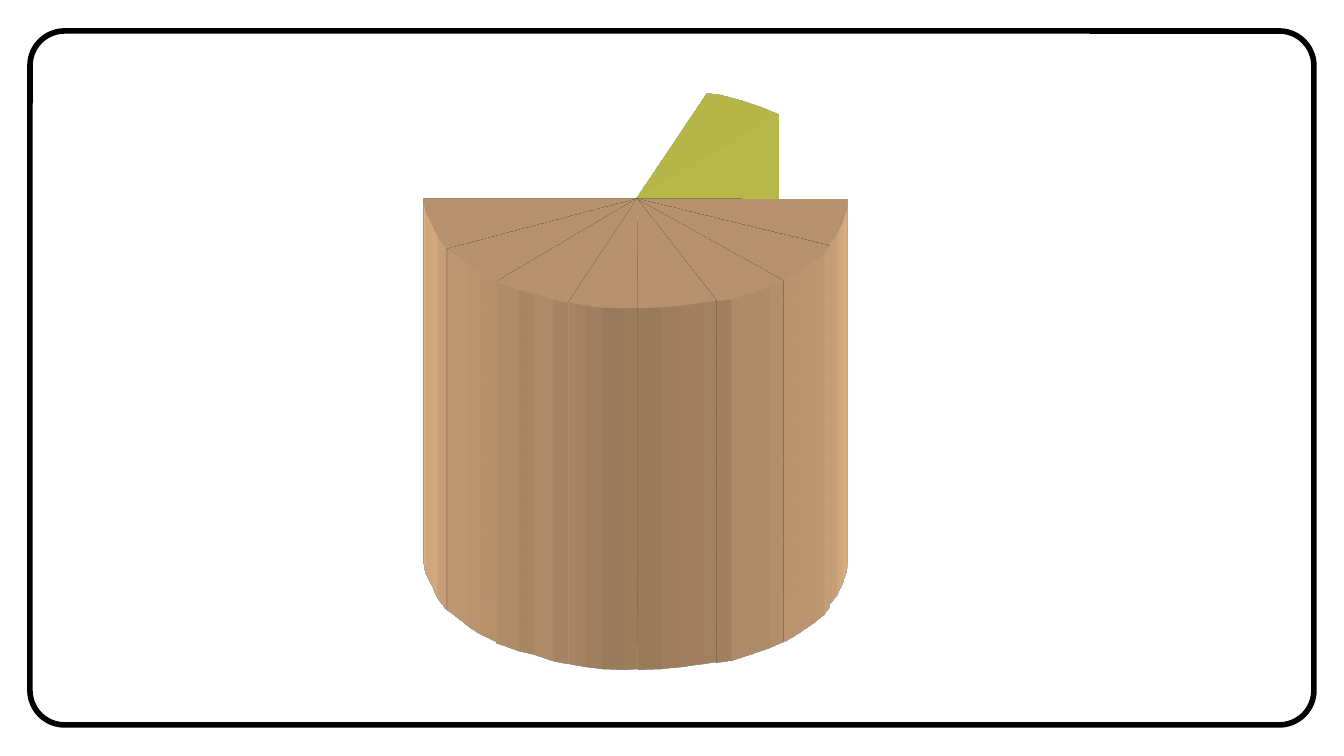
from lxml import etree
from pptx import Presentation
from pptx import util as u
from pptx.dml.color import RGBColor
from pptx.enum import shapes
from pptx.oxml.ns import qn

SCALE = 914400 / 134.4  # EMU in one px
WIDTH, HEIGHT = 1344, 756

BLACK = RGBColor(0x00, 0x00, 0x00)
WHITE = RGBColor(0xFF, 0xFF, 0xFF)
TAN = RGBColor(0xFF, 0xCC, 0x99)
YELLOW = RGBColor(0xFF, 0xFF, 0x66)

CENTRE = (637, 199)
DEPTH = 722  # an oblique view shows half of it

# Outer points of each wedge, from back to front.
LEFT_ARCS = [
    [(424, 199), (426, 212), (433, 226), (438, 237), (447, 249)],
    [(447, 249), (460, 259), (469, 266), (480, 273), (497, 281)],
    [(497, 282), (519, 290), (535, 294), (554, 300), (569, 303)],
]
YELLOW_ARC = [(707, 94), (718, 95), (742, 101), (762, 108), (779, 115)]
FRONT_ARCS = [
    [(848, 200), (847, 211), (843, 223), (837, 235), (829, 245)],
    [(829, 246), (823, 254), (813, 262), (800, 271), (784, 281)],
    [(784, 281), (770, 287), (753, 293), (732, 300), (716, 302)],
    [(716, 301), (703, 303), (681, 306), (661, 308), (638, 309)],
    [(638, 308), (624, 309), (603, 308), (586, 306), (569, 303)],
]


def px(length):
    return u.Emu(round(length * SCALE))


class Board:
    def __init__(self, slide):
        self.slide = slide

    def paint(self, shape, fill):
        shape.shadow.inherit = False
        shape.fill.solid()
        shape.fill.fore_color.rgb = fill

    def frame(self, left, top, width, height):
        shape = self.slide.shapes.add_shape(
            shapes.MSO_SHAPE.ROUNDED_RECTANGLE, px(left), px(top), px(width), px(height))
        shape.adjustments[0] = 0.05
        self.paint(shape, WHITE)
        shape.line.color.rgb = BLACK
        shape.line.width = u.Pt(3)

    def wedge(self, arc, fill):
        builder = self.slide.shapes.build_freeform(*CENTRE, scale=SCALE)
        builder.add_line_segments(arc, close=True)
        shape = builder.convert_to_shape()
        self.paint(shape, fill)
        shape.line.fill.background()
        self.extrude(shape, fill)

    def extrude(self, shape, colour):
        """Stretch the shape straight down into a solid block."""
        properties = shape._element.spPr
        scene = etree.SubElement(properties, qn("a:scene3d"))
        etree.SubElement(scene, qn("a:camera"), prst="legacyObliqueBottom")
        etree.SubElement(scene, qn("a:lightRig"), rig="legacyFlat3", dir="t")
        solid = etree.SubElement(properties, qn("a:sp3d"), extrusionH=str(px(DEPTH)),
                                 prstMaterial="legacyMatte")
        extrusion = etree.SubElement(solid, qn("a:extrusionClr"))
        etree.SubElement(extrusion, qn("a:srgbClr"), val=str(colour))


def main():
    presentation = Presentation()
    presentation.slide_width, presentation.slide_height = px(WIDTH), px(HEIGHT)
    board = Board(presentation.slides.add_slide(presentation.slide_layouts[6]))

    board.frame(30, 31, 1284, 694)
    for arc in LEFT_ARCS:
        board.wedge(arc, TAN)
    board.wedge(YELLOW_ARC, YELLOW)
    for arc in FRONT_ARCS:
        board.wedge(arc, TAN)

    presentation.save("out.pptx")


if __name__ == "__main__":
    main()
